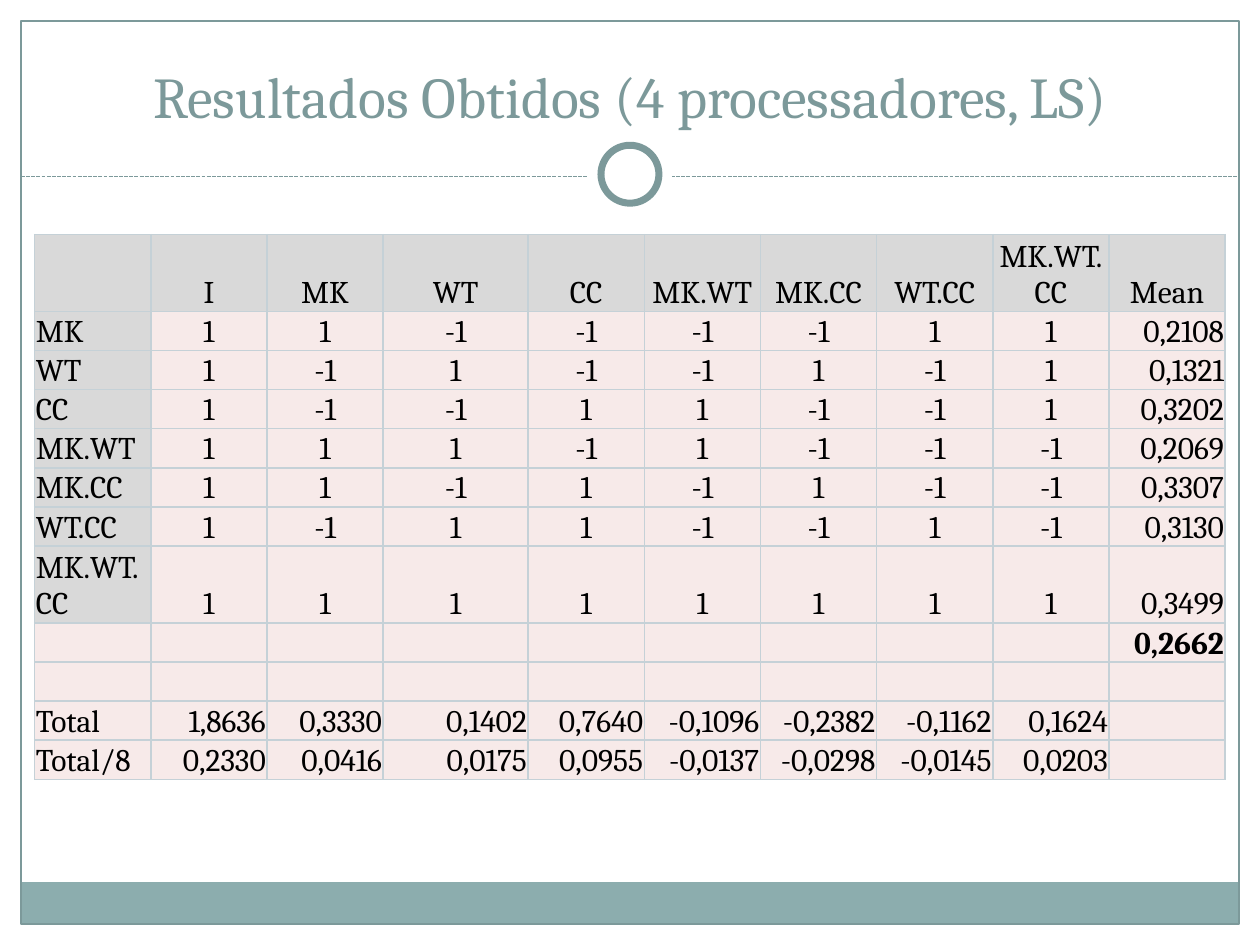
from dataclasses import dataclass
from math import prod

from lxml import etree
from pptx import Presentation
from pptx.dml.color import RGBColor
from pptx.enum.dml import MSO_LINE
from pptx.enum.shapes import MSO_CONNECTOR, MSO_SHAPE
from pptx.enum.text import MSO_ANCHOR, PP_ALIGN
from pptx.oxml.ns import qn
from pptx.util import Inches, Pt

RECTANGLE, OVAL = MSO_SHAPE.RECTANGLE, MSO_SHAPE.OVAL
STRAIGHT, DASHED = MSO_CONNECTOR.STRAIGHT, MSO_LINE.SQUARE_DOT
BOTTOM = MSO_ANCHOR.BOTTOM
LEFT, CENTER, RIGHT = PP_ALIGN.LEFT, PP_ALIGN.CENTER, PP_ALIGN.RIGHT

COLUMNS, ROWS = 60, 45
UNIT = Inches(10) / COLUMNS


@dataclass(frozen=True)
class Theme:
    font: str = "Cambria"
    title_size: float = 33
    table_size: float = 18
    frame_line: float = 0.75
    ring_line: float = 4
    cell_line: float = 1
    accent: str = "7C999A"
    band: str = "8CADAE"
    paper: str = "FFFFFF"
    ink: str = "000000"
    heading_fill: str = "D9D9D9"
    body_fill: str = "F7EAE9"
    grid: str = "C5D1D7"


@dataclass(frozen=True)
class Box:
    left: float
    top: float
    width: float
    height: float

    def inset(self, gap):
        return Box(self.left + gap, self.top + gap,
                   self.width - 2 * gap, self.height - 2 * gap)

    def lengths(self):
        return [grid(v) for v in (self.left, self.top, self.width, self.height)]


THEME = Theme()
EFFECTS = ["MK", "WT", "CC", "MK.WT", "MK.CC", "WT.CC", "MK.WT.CC"]
MEANS = ["0,2108", "0,1321", "0,3202", "0,2069", "0,3307", "0,3130", "0,3499"]
OVERALL_MEAN = "0,2662"
TOTALS = ["Total", "1,8636", "0,3330", "0,1402", "0,7640",
          "-0,1096", "-0,2382", "-0,1162", "0,1624", ""]
EIGHTHS = ["Total/8", "0,2330", "0,0416", "0,0175", "0,0955",
           "-0,0137", "-0,0298", "-0,0145", "0,0203", ""]


def grid(units):
    return round(units * UNIT)


def rgb(value):
    return RGBColor.from_string(value)


def write(para, text, size, color, align, bold=False):
    para.alignment = align
    span = para.add_run()
    span.text = text
    span.font.name = THEME.font
    span.font.size = Pt(size)
    span.font.bold = bold
    span.font.color.rgb = rgb(color)


def add_panel(page, kind, box, fill=None, line_width=None):
    panel = page.shapes.add_shape(kind, *box.lengths())
    panel.shadow.inherit = False
    if fill:
        panel.fill.solid()
        panel.fill.fore_color.rgb = rgb(fill)
    else:
        panel.fill.background()
    if line_width:
        panel.line.color.rgb = rgb(THEME.accent)
        panel.line.width = Pt(line_width)
    else:
        panel.line.fill.background()


def add_frame(page, box):
    bottom = box.top + box.height
    add_panel(page, RECTANGLE, Box(box.left, bottom - 2, box.width, 2), THEME.band)
    add_panel(page, RECTANGLE, box, line_width=THEME.frame_line)


def add_divider(page, box):
    middle = grid(box.top + box.height / 2)
    rule = page.shapes.add_connector(
        STRAIGHT, grid(box.left), middle, grid(box.left + box.width), middle)
    rule.line.color.rgb = rgb(THEME.accent)
    rule.line.width = Pt(THEME.frame_line)
    rule.line.dash_style = DASHED
    etree.SubElement(rule.element.spPr, qn("a:effectLst"))
    halo = Box(box.left + (box.width - box.height) / 2, box.top - 0.1,
               box.height, box.height)
    add_panel(page, OVAL, halo, THEME.paper)
    add_panel(page, OVAL, halo.inset(0.62), THEME.paper, THEME.ring_line)


def add_title(page, box, text):
    frame = page.shapes.add_textbox(*box.lengths()).text_frame
    frame.word_wrap = True
    frame.vertical_anchor = BOTTOM
    write(frame.paragraphs[0], text, THEME.title_size, THEME.accent, CENTER)


def sign(run, effect):
    active = run.split(".")
    return str(prod(1 if factor in active else -1 for factor in effect.split(".")))


def table_rows():
    rows = [["", "I", *EFFECTS, "Mean"]]
    for run, mean in zip(EFFECTS, MEANS):
        rows.append([run, "1", *(sign(run, effect) for effect in EFFECTS), mean])
    blank = [""] * len(rows[0])
    return rows + [blank[:-1] + [OVERALL_MEAN], blank, TOTALS, EIGHTHS]


def style_cell(cell, fill):
    cell.margin_left = cell.margin_right = cell.margin_top = Inches(0.01)
    cell.margin_bottom = 0
    cell.vertical_anchor = BOTTOM
    properties = cell._tc.get_or_add_tcPr()
    for side in ("a:lnL", "a:lnR", "a:lnT", "a:lnB"):
        line = etree.SubElement(properties, qn(side), w=str(Pt(THEME.cell_line)))
        solid = etree.SubElement(line, qn("a:solidFill"))
        etree.SubElement(solid, qn("a:srgbClr"), val=THEME.grid)
    cell.fill.solid()
    cell.fill.fore_color.rgb = rgb(fill)


def cell_align(row, column, last_column, last_run):
    if column == 0:
        return LEFT
    if row == 0 or (row <= last_run and column < last_column):
        return CENTER
    return RIGHT


def add_results(page, box):
    rows = table_rows()
    last_run, last_column = len(EFFECTS), len(rows[0]) - 1
    holder = page.shapes.add_table(len(rows), len(rows[0]), *box.lengths())
    table = holder.table
    table.horz_banding = table.first_row = False
    wide_column, wide = 3, 6.9
    for index, column in enumerate(table.columns):
        column.width = grid(wide if index == wide_column
                            else (box.width - wide) / last_column)
    special_heights = {last_run: 3.24, last_run + 1: 1.8}
    for row, texts in enumerate(rows):
        table.rows[row].height = grid(special_heights.get(row, 1.68))
        for column, text in enumerate(texts):
            cell = table.cell(row, column)
            heading = row == 0 or (column == 0 and row <= last_run)
            style_cell(cell, THEME.heading_fill if heading else THEME.body_fill)
            if text:
                write(cell.text_frame.paragraphs[0], text, THEME.table_size, THEME.ink,
                      cell_align(row, column, last_column, last_run),
                      text == OVERALL_MEAN)
    holder.height = grid(box.height)


def main():
    deck = Presentation()
    deck.slide_width, deck.slide_height = grid(COLUMNS), grid(ROWS)
    page = deck.slides.add_slide(deck.slide_layouts[6])
    add_frame(page, Box(1, 1, COLUMNS - 2, ROWS - 2))
    add_divider(page, Box(1, 6.4, COLUMNS - 2, 4))
    add_title(page, Box(2, 1.5, COLUMNS - 4, 5),
              "Resultados Obtidos (4 processadores, LS)")
    add_results(page, Box(1.65, 11.17, 56.7, 26))
    deck.save("out.pptx")


if __name__ == "__main__":
    main()
